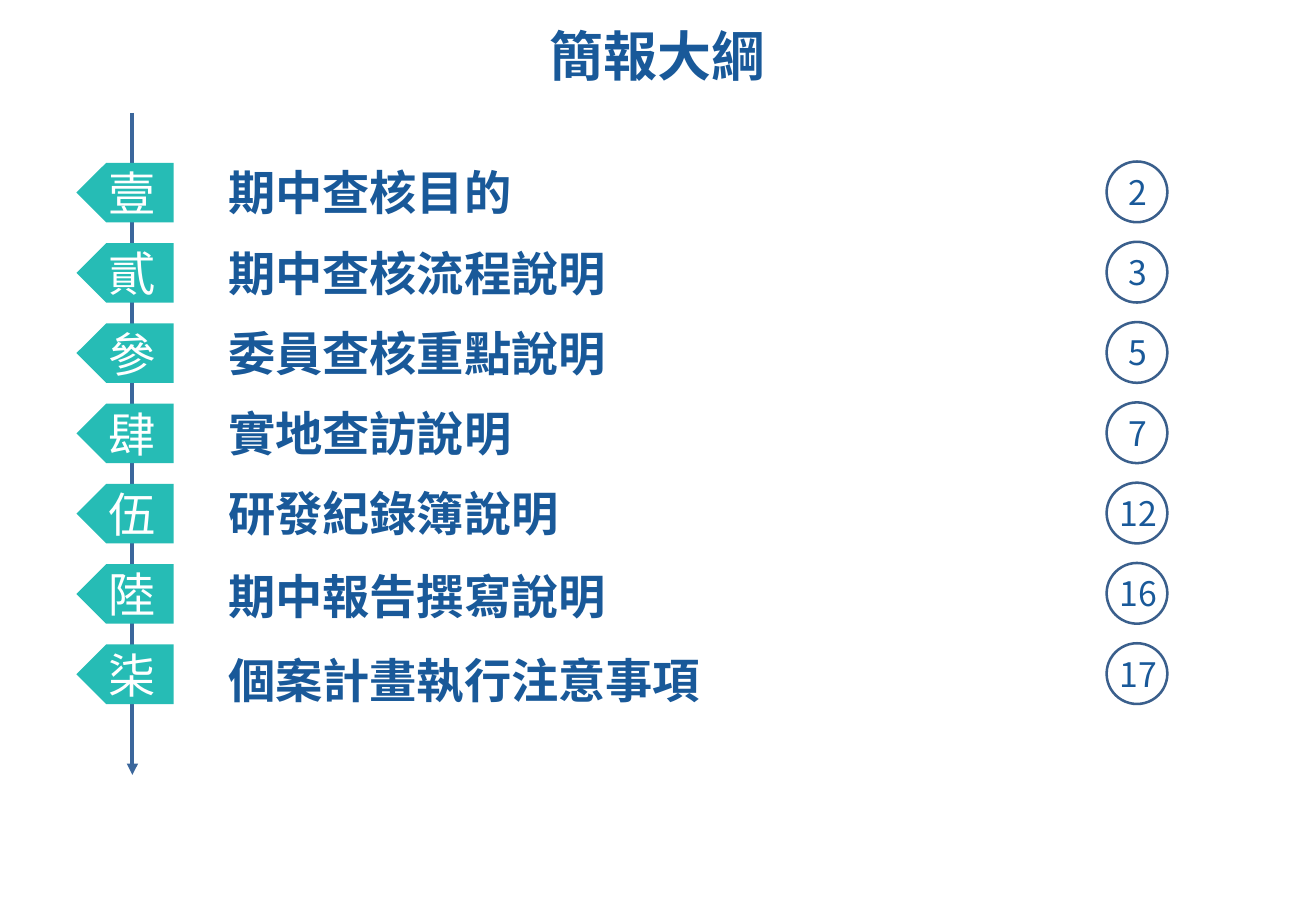
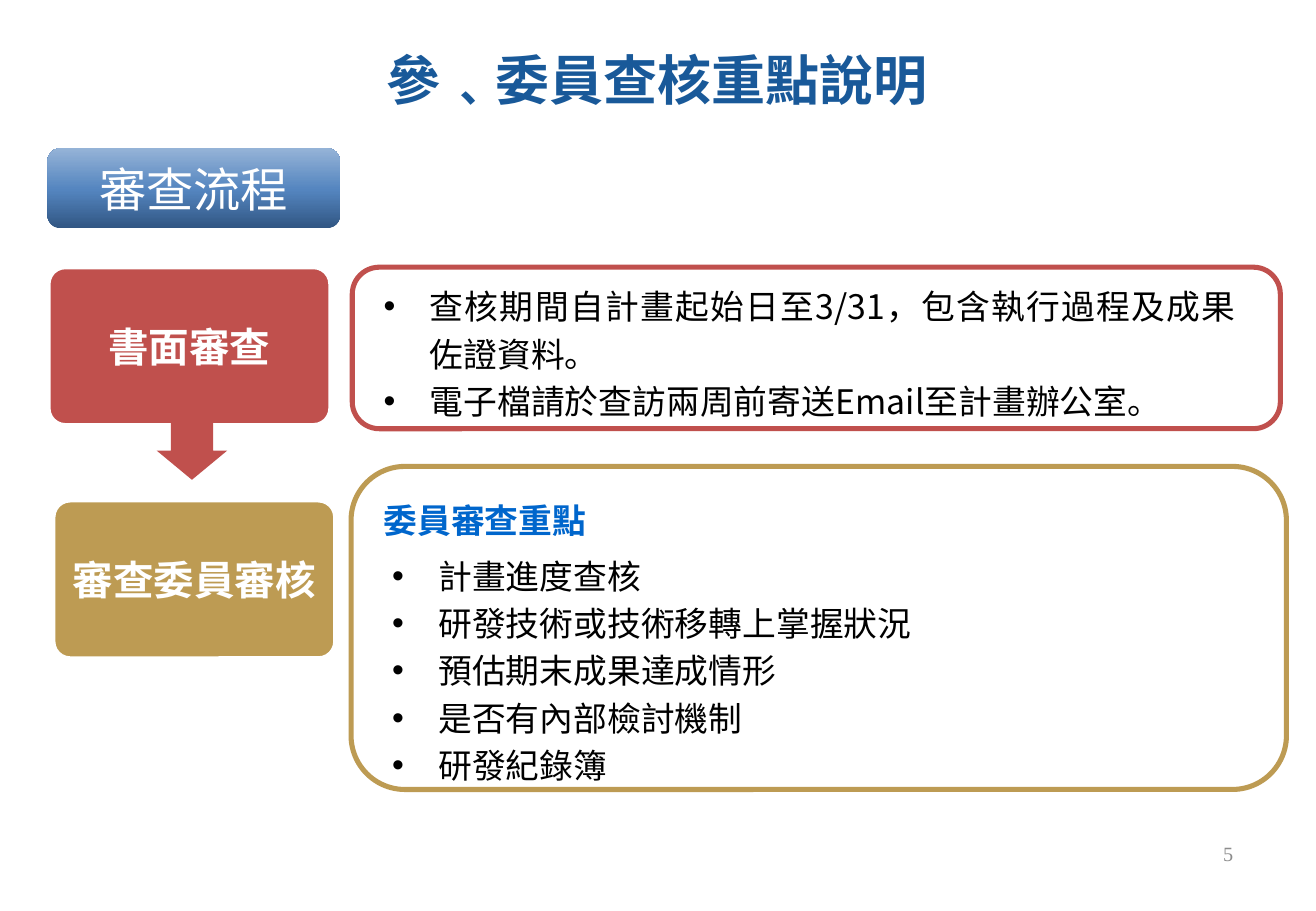
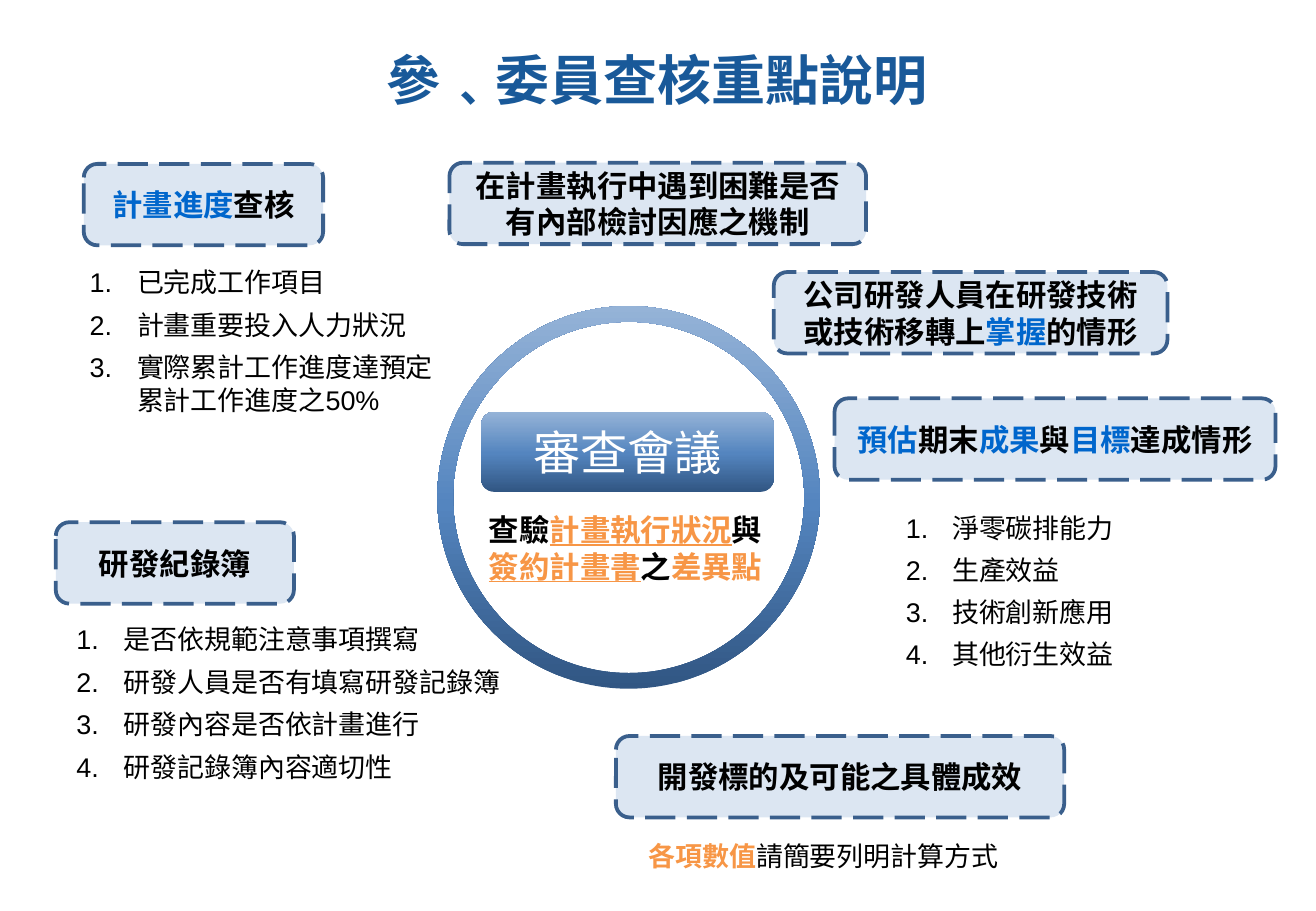
from dataclasses import dataclass
from typing import NamedTuple, Optional, Sequence, Union
from copy import deepcopy

from pptx import Presentation
from pptx.dml.color import RGBColor
from pptx.enum.dml import MSO_LINE_DASH_STYLE as Dash
from pptx.enum.shapes import MSO_CONNECTOR as Connector, MSO_SHAPE as Preset
from pptx.enum.text import MSO_ANCHOR as Anchor, MSO_AUTO_SIZE as AutoSize, PP_ALIGN as Align
from pptx.oxml.ns import qn
from pptx.util import Inches, Pt
from lxml.etree import SubElement

CELL = Inches(0.1)  # the grid: all areas count cells of a tenth of an inch
COLUMNS, ROWS = 108.33, 75

WHITE = RGBColor(0xFF, 0xFF, 0xFF)
BLACK = RGBColor(0x00, 0x00, 0x00)
GRAY = RGBColor(0x8C, 0x8C, 0x8C)
NAVY = RGBColor(0x19, 0x59, 0x99)
OUTLINE = RGBColor(0x3A, 0x5F, 0x8C)
AXIS = RGBColor(0x3B, 0x67, 0x9C)
TEAL = RGBColor(0x26, 0xBC, 0xB5)
RED = RGBColor(0xC0, 0x50, 0x4D)
GOLD = RGBColor(0xBD, 0x9B, 0x53)
BLUE = RGBColor(0x00, 0x66, 0xCC)
ORANGE = RGBColor(0xF7, 0x96, 0x46)
PALE = RGBColor(0xDC, 0xE6, 0xF2)
GRADIENT = ((0, RGBColor(0x31, 0x56, 0x83)),
            (0.48, RGBColor(0x54, 0x85, 0xBF)),
            (1, RGBColor(0x95, 0xB3, 0xD7)))

ARIAL, NOTO, TIMES = "Arial", "Noto Sans CJK SC", "Times New Roman"


class Area(NamedTuple):
    left: float
    top: float
    width: float
    height: float

    def lengths(self) -> list[int]:
        return [cells(value) for value in self]


class Span(NamedTuple):
    text: str
    color: Optional[RGBColor] = None
    underline: bool = False
    bold: Optional[bool] = None
    font: Optional[str] = None


Para = Sequence[Union[str, Span]]


@dataclass(frozen=True)
class Style:
    size: float
    color: RGBColor = BLACK
    font: str = ARIAL
    bold: bool = False
    align: Align = Align.LEFT
    line: Optional[float] = None
    after: float = 0
    bullet: Optional[str] = None  # a character, or "1." for numbers
    indent: float = 0
    hanging: float = 0


class Entry(NamedTuple):
    numeral: str
    topic: str
    number: str
    font: str = NOTO
    drop: float = 0


class Stage(NamedTuple):
    name: str
    color: RGBColor
    card: Area
    panel: Area


class Label(NamedTuple):
    area: Area
    para: Para


class Listing(NamedTuple):
    area: Area
    style: Style
    items: Sequence[str]


TITLE = Style(32, NAVY, bold=True, align=Align.CENTER)
BADGE = Style(28, WHITE, align=Align.CENTER)
STAGE = Style(24, WHITE, bold=True, align=Align.CENTER)
LABEL = Style(18, bold=True, align=Align.CENTER)
BULLETS = Style(20, font=NOTO, align=Align.JUSTIFY, line=28, bullet="•", indent=3.8, hanging=3.8)
NUMBERS = Style(16, after=6, bullet="1.", indent=7.9, hanging=3.9)
GOALS = Style(16, line=25, bullet="1.", indent=9.6, hanging=3.8)

ENTRIES = (
    Entry("壹", "期中查核目的", "2"),
    Entry("貳", "期中查核流程說明", "3"),
    Entry("參", "委員查核重點說明", "5"),
    Entry("肆", "實地查訪說明", "7"),
    Entry("伍", "研發紀錄簿說明", "12"),
    Entry("陸", "期中報告撰寫說明", "16", ARIAL, 0.2),
    Entry("柒", "個案計畫執行注意事項", "17", ARIAL, 0.5),
)
REVIEW_TITLE = ("參", Span("﹑", font=NOTO), "委員查核重點說明")
OUTLINE_TITLE_AREA = Area(0, -0.2, COLUMNS, 9.4)
REVIEW_TITLE_AREA = Area(4.9, 4.1, 98.4, 4.8)

STAGES = (
    Stage("書面審查", RED, Area(4.1, 22.1, 23, 12.8), Area(29, 22, 76.4, 13.3)),
    Stage("審查委員審核", GOLD, Area(4.5, 41.3, 23, 12.8), Area(28.9, 38.4, 77, 26.6)),
)
STAGE_LISTINGS = (
    Listing(Area(30.6, 22.5, 72.1, 12.8), BULLETS, (
        "查核期間自計畫起始日至3/31，包含執行過程及成果佐證資料。",
        "電子檔請於查訪兩周前寄送Email至計畫辦公室。")),
    Listing(Area(31.3, 44.7, 62.1, 20.3), BULLETS, (
        "計畫進度查核", "研發技術或技術移轉上掌握狀況", "預估期末成果達成情形",
        "是否有內部檢討機制", "研發紀錄簿")),
)

LABELS = (
    Label(Area(6.9, 13.5, 19.7, 6.7), (Span("計畫進度", BLUE), "查核")),
    Label(Area(63.7, 22.4, 32.4, 6.7),
          ("公司研發人員在研發技術或技術移轉上", Span("掌握", BLUE), "的情形")),
    Label(Area(4.6, 43, 19.6, 6.7), ("研發紀錄簿",)),
    Label(Area(68.7, 32.8, 36.3, 6.7),
          (Span("預估", BLUE), "期末", Span("成果", BLUE), "與", Span("目標", BLUE), "達成情形")),
    Label(Area(37, 13.4, 34.3, 6.7), ("在計畫執行中遇到困難是否有內部檢討因應之機制",)),
    Label(Area(50.7, 60.6, 36.9, 6.7), ("開發標的及可能之具體成效",)),
)
MEETING_LISTINGS = (
    Listing(Area(67.8, 40.8, 36.7, 14.7), GOALS,
            ("淨零碳排能力", "生產效益", "技術創新應用", "其他衍生效益")),
    Listing(Area(1.3, 50.8, 43.2, 14.3), NUMBERS,
            ("是否依規範注意事項撰寫", "研發人員是否有填寫研發記錄簿",
             "研發內容是否依計畫進行", "研發記錄簿內容適切性")),
    Listing(Area(2.4, 21.4, 36, 13.5), NUMBERS,
            ("已完成工作項目", "計畫重要投入人力狀況", "實際累計工作進度達預定累計工作進度之50%")),
)


def cells(count: float) -> int:
    return round(count * CELL)


def set_typeface(font, properties, name: str) -> None:
    """Name the font for both Latin and East Asian text."""
    font.name = name
    SubElement(properties, qn("a:ea")).set("typeface", name)


def add_bullet(properties, style: Style) -> None:
    properties.set("marL", str(cells(style.indent)))
    properties.set("indent", str(-cells(style.hanging)))
    numbered = style.bullet == "1."
    SubElement(properties, qn("a:buFont")).set("typeface", NOTO if numbered else ARIAL)
    if numbered:
        SubElement(properties, qn("a:buAutoNum")).set("type", "arabicPeriod")
    else:
        SubElement(properties, qn("a:buChar")).set("char", style.bullet)


def write(frame, paras: Sequence[Para], style: Style) -> None:
    frame.word_wrap = True
    for index, spans in enumerate(paras):
        para = frame.add_paragraph() if index else frame.paragraphs[0]
        para.alignment = style.align
        para.space_before = Pt(0)
        para.space_after = Pt(style.after)
        if style.line:
            para.line_spacing = Pt(style.line)
        properties = para._p.get_or_add_pPr()
        if style.bullet:
            add_bullet(properties, style)
        font = para.font
        font.size, font.bold = Pt(style.size), style.bold
        font.color.rgb = style.color
        set_typeface(font, properties.find(qn("a:defRPr")), style.font)
        for item in spans:
            span = item if isinstance(item, Span) else Span(item)
            run = para.add_run()
            run.text = span.text
            if span.color is not None:
                run.font.color.rgb = span.color
            if span.underline:
                run.font.underline = True
            if span.bold is not None:
                run.font.bold = span.bold
            if span.font:
                set_typeface(run.font, run._r.get_or_add_rPr(), span.font)


def add_text(page, area: Area, paras: Sequence[Para], style: Style, anchor: Anchor = Anchor.TOP):
    box = page.shapes.add_textbox(*area.lengths())
    box.text_frame.vertical_anchor = anchor
    write(box.text_frame, paras, style)
    return box


def add_listing(page, listing: Listing) -> None:
    add_text(page, listing.area, [(item,) for item in listing.items], listing.style)


def add_preset(page, preset: Preset, area: Area, fill: Optional[RGBColor] = None,
               line: Optional[RGBColor] = None, weight: float = 1, adjust: Sequence[float] = ()):
    shape = page.shapes.add_shape(preset, *area.lengths())
    shape.shadow.inherit = False
    for index, value in enumerate(adjust):
        shape.adjustments[index] = value
    if fill is None:
        shape.fill.background()
    else:
        shape.fill.solid()
        shape.fill.fore_color.rgb = fill
    if line is None:
        shape.line.fill.background()
    else:
        shape.line.color.rgb = line
        shape.line.width = Pt(weight)
    return shape


def paint_gradient(shape) -> None:
    fill = shape.fill
    fill.gradient()
    fill.gradient_angle = 90
    stops = shape._element.spPr.find(qn("a:gradFill")).find(qn("a:gsLst"))
    stops.append(deepcopy(stops[0]))
    for stop, (position, color) in zip(fill.gradient_stops, GRADIENT):
        stop.position = position
        stop.color.rgb = color


def add_banner(page, left: float, top: float, text: str) -> None:
    banner = add_preset(page, Preset.ROUNDED_RECTANGLE, Area(left, top, 24.1, 6.6))
    paint_gradient(banner)
    write(banner.text_frame, [(text,)], BADGE)


def add_page(deck, title: Para, area: Area):
    page = deck.slides.add_slide(deck.slide_layouts[5])
    holder = page.shapes.title
    holder.left, holder.top, holder.width, holder.height = area.lengths()
    frame = holder.text_frame
    frame.auto_size = AutoSize.NONE
    frame.vertical_anchor = Anchor.MIDDLE
    frame.margin_left = frame.margin_right = frame.margin_top = frame.margin_bottom = 0
    write(frame, [title], TITLE)
    return page


def add_axis(page, column: float, top: float, bottom: float) -> None:
    axis = page.shapes.add_connector(Connector.STRAIGHT, cells(column), cells(top),
                                     cells(column), cells(bottom))
    axis.line.color.rgb = AXIS
    axis.line.width = Pt(2.25)
    SubElement(axis.line._get_or_add_ln(), qn("a:tailEnd")).set("type", "triangle")
    SubElement(axis._element.spPr, qn("a:effectLst"))


def add_entry(page, entry: Entry, top: float) -> None:
    tag = add_preset(page, Preset.PENTAGON, Area(6.3, top + 0.1, 8, 4.9), TEAL)
    tag._element.spPr.find(qn("a:xfrm")).set("flipH", "1")
    write(tag.text_frame, [(entry.numeral,)], BADGE)
    add_text(page, Area(17.8, top + entry.drop, 67.5, 5), [(entry.topic,)],
             Style(28, NAVY, entry.font, bold=True), Anchor.MIDDLE)
    add_preset(page, Preset.OVAL, Area(91.1, top, 5, 5), line=OUTLINE, weight=1.5)
    add_text(page, Area(90.5, top + 0.3, 6.4, 4.4), [(entry.number,)],
             Style(20, NAVY, NOTO, align=Align.CENTER), Anchor.MIDDLE)


def build_outline(deck) -> None:
    page = add_page(deck, ("簡報大綱",), OUTLINE_TITLE_AREA)
    add_axis(page, 10.9, 9.3, 63.8)
    for index, entry in enumerate(ENTRIES):
        add_entry(page, entry, 13.3 + 6.61 * index)


def build_stages(deck) -> None:
    page = add_page(deck, REVIEW_TITLE, REVIEW_TITLE_AREA)
    add_banner(page, 3.9, 12.2, "審查流程")
    for stage in STAGES:
        card = add_preset(page, Preset.ROUNDED_RECTANGLE, stage.card, stage.color, WHITE, 1, (0.1,))
        write(card.text_frame, [(stage.name,)], STAGE)
        add_preset(page, Preset.ROUNDED_RECTANGLE, stage.panel, line=stage.color, weight=3)
    add_preset(page, Preset.DOWN_ARROW, Area(12.9, 34.7, 5.8, 4.8), RED, adjust=(0.6, 0.5))
    for listing in STAGE_LISTINGS:
        add_listing(page, listing)
    add_text(page, Area(30.6, 40.1, 25, 4.6), [("委員審查重點",)],
             Style(20, BLUE, NOTO, bold=True, line=28))
    add_text(page, Area(78.1, 68.3, 24.4, 4), [("5",)],
             Style(12, GRAY, TIMES, align=Align.RIGHT), Anchor.MIDDLE)


def build_meeting(deck) -> None:
    page = add_page(deck, REVIEW_TITLE, REVIEW_TITLE_AREA)
    ring = add_preset(page, Preset.DONUT, Area(36, 25.2, 31.5, 31.5), adjust=(0.041,))
    paint_gradient(ring)
    add_banner(page, 39.6, 33.9, "審查會議")
    add_text(page, Area(36.5, 41.6, 30, 7.1), [
        ("查驗", Span("計畫執行狀況", ORANGE, underline=True), "與"),
        (Span("簽約計畫書", ORANGE, underline=True), "之", Span("差異點", ORANGE)),
    ], LABEL)
    for label in LABELS:
        frame = add_preset(page, Preset.ROUNDED_RECTANGLE, label.area, PALE, OUTLINE, 2.25)
        frame.line.dash_style = Dash.LONG_DASH
        write(frame.text_frame, [label.para], LABEL)
    for listing in MEETING_LISTINGS:
        add_listing(page, listing)
    add_text(page, Area(52.4, 68.6, 32.7, 3.7),
             [(Span("各項數值", ORANGE, bold=True), "請簡要列明計算方式")], Style(16, font=NOTO))


def main() -> None:
    deck = Presentation()
    deck.slide_width, deck.slide_height = cells(COLUMNS), cells(ROWS)
    for build in (build_outline, build_stages, build_meeting):
        build(deck)
    deck.save("out.pptx")


if __name__ == "__main__":
    main()
